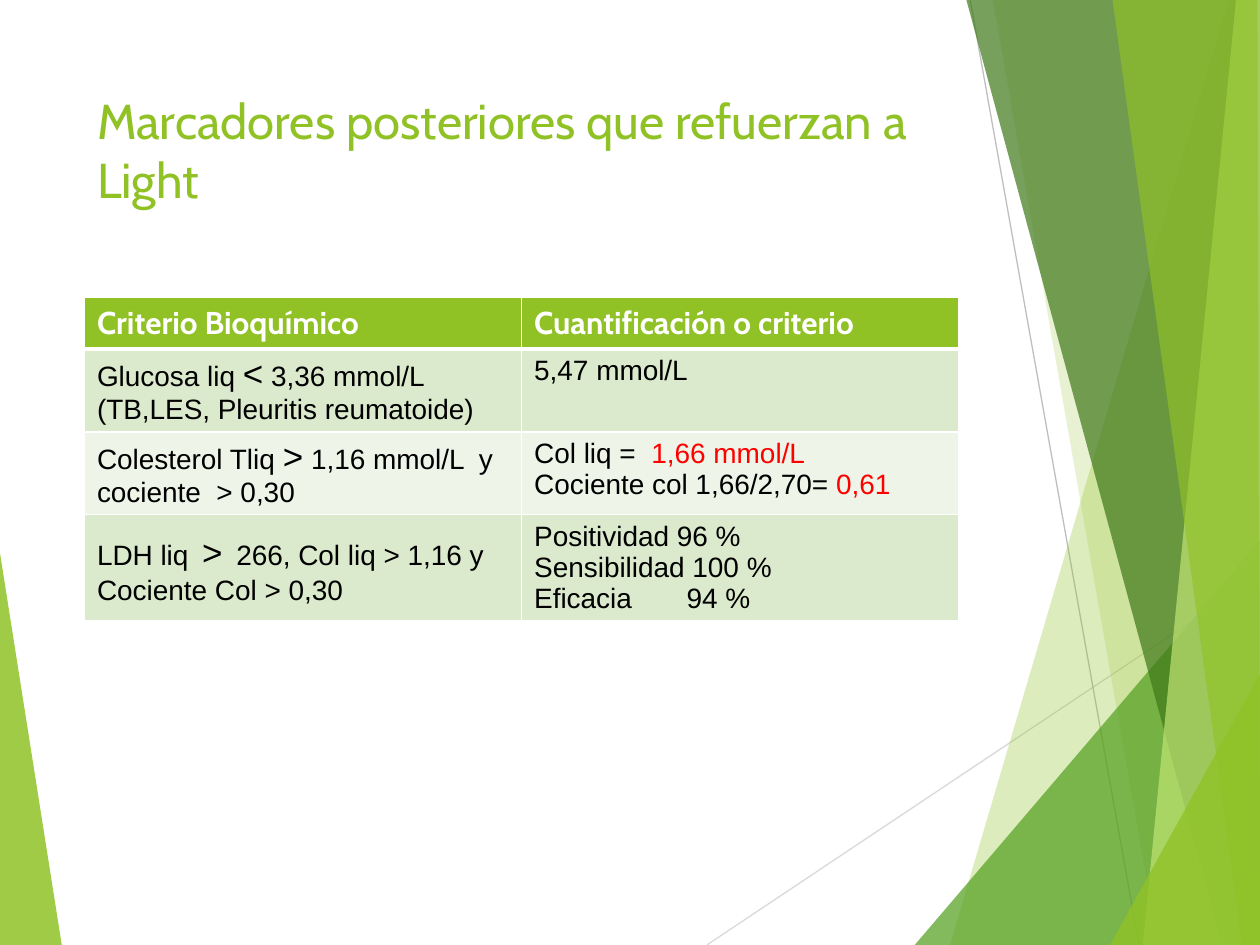
from typing import NamedTuple

from lxml.etree import SubElement
from pptx import Presentation
from pptx.dml.color import RGBColor
from pptx.enum.shapes import MSO_CONNECTOR
from pptx.enum.text import MSO_ANCHOR, MSO_AUTO_SIZE, PP_ALIGN
from pptx.oxml.ns import qn
from pptx.util import Inches, Pt

GREEN = "90C226"
WHITE = "FFFFFF"
BLACK = "000000"
RED = "FF0000"
BANDS = ("DBE9CD", "EEF4E8")


class Facet(NamedTuple):
    points: list
    color: str
    opacity: int


class Ray(NamedTuple):
    start: tuple
    end: tuple
    color: str


class Piece(NamedTuple):
    text: str
    size: int = 16
    color: str = BLACK


LEFT_FACET = Facet([(0, 4.39), (0.49, 7.5), (0, 7.5)], GREEN, 85)
RAYS = [
    Ray((5.61, 7.5), (10, 4.57), "D9D9D9"),
    Ray((7.7, 0), (9.04, 7.5), "BFBFBF"),
]
RIGHT_FACETS = [
    Facet([(9.75, 0), (7.54, 7.5), (10, 7.5), (10, 0)], GREEN, 30),
    Facet([(7.88, 0), (9.19, 7.5), (10, 7.5), (10, 0)], GREEN, 20),
    Facet([(7.26, 7.5), (10, 4.29), (10, 7.5)], "54A021", 72),
    Facet([(7.67, 0), (9.7, 7.5), (10, 7.5), (10, 0)], "3F7819", 70),
    Facet([(9.81, 0), (9.07, 7.5), (10, 7.5), (10, 0)], "C0E474", 70),
    Facet([(8.83, 0), (9.86, 7.5), (10, 7.5), (9.98, 0)], GREEN, 65),
    Facet([(8.81, 7.5), (10, 5.35), (10, 7.5)], GREEN, 80),
]

HEADERS = ["Criterio Bioquímico", "Cuantificación o criterio"]
# Each row holds two cells, each cell a list of paragraphs made of pieces
ROWS = [
    [
        [[Piece("Glucosa liq "), Piece("<", 20),
          Piece(" 3,36 mmol/L (TB,LES, Pleuritis reumatoide)")]],
        [[Piece("5,47 mmol/L")]],
    ],
    [
        [[Piece("Colesterol Tliq "), Piece(">", 20),
          Piece(" 1,16 mmol/L  y  cociente  > 0,30")]],
        [[Piece("Col liq =  "), Piece("1,66 mmol/L", color=RED)],
         [Piece("Cociente col 1,66/2,70= "), Piece("0,61", color=RED)]],
    ],
    [
        [[Piece("LDH liq"), Piece(" ", 28), Piece(">", 20), Piece(" ", 28),
          Piece("266, Col liq > 1,16 y Cociente Col > 0,30")]],
        [[Piece("Positividad 96 %")],
         [Piece("Sensibilidad 100 %")],
         [Piece("Eficacia\t94 %")]],
    ],
]


def rgb(color: str) -> RGBColor:
    return RGBColor.from_string(color)


def add_text(paragraph, text: str, *, size: int, color: str,
             font: str = "Arial", bold: bool = False) -> None:
    run = paragraph.add_run()
    run.text = text
    run.font.size = Pt(size)
    run.font.name = font
    run.font.bold = bold
    run.font.color.rgb = rgb(color)


def draw_facet(slide, facet: Facet) -> None:
    first, *rest = [(Inches(x), Inches(y)) for x, y in facet.points]
    builder = slide.shapes.build_freeform(*first)
    builder.add_line_segments(rest, close=True)
    shape = builder.convert_to_shape()
    shape.shadow.inherit = False
    shape.line.fill.background()
    shape.fill.solid()
    shape.fill.fore_color.rgb = rgb(facet.color)
    color_element = shape.fill._xPr.find(f".//{qn('a:srgbClr')}")
    SubElement(color_element, qn("a:alpha"), val=str(facet.opacity * 1000))


def draw_ray(slide, ray: Ray) -> None:
    ends = [Inches(value) for value in ray.start + ray.end]
    connector = slide.shapes.add_connector(MSO_CONNECTOR.STRAIGHT, *ends)
    connector.line.color.rgb = rgb(ray.color)
    connector.line.width = Pt(0.75)
    SubElement(connector._element.spPr, qn("a:effectLst"))


def format_cell(cell, fill: str, top: int = 1, bottom: int = 1) -> None:
    properties = cell._tc.get_or_add_tcPr()
    for side, width in (("L", 1), ("R", 1), ("T", top), ("B", bottom)):
        border = SubElement(properties, qn(f"a:ln{side}"), w=str(Pt(width)))
        solid = SubElement(border, qn("a:solidFill"))
        SubElement(solid, qn("a:srgbClr"), val=WHITE)
    cell.fill.solid()
    cell.fill.fore_color.rgb = rgb(fill)


def add_tab_stop(paragraph, position: float) -> None:
    tabs = SubElement(paragraph._p.get_or_add_pPr(), qn("a:tabLst"))
    SubElement(tabs, qn("a:tab"), pos=str(Inches(position)), algn="l")


def fill_cell(cell, paragraphs: list) -> None:
    frame = cell.text_frame
    for index, pieces in enumerate(paragraphs):
        paragraph = frame.add_paragraph() if index else frame.paragraphs[0]
        for piece in pieces:
            add_text(paragraph, piece.text, size=piece.size, color=piece.color)
        if any("\t" in piece.text for piece in pieces):
            add_tab_stop(paragraph, 1.21)


def draw_table(slide) -> None:
    row_count = len(ROWS) + 1
    frame = slide.shapes.add_table(row_count, len(HEADERS), Inches(0.67),
                                   Inches(2.36), Inches(6.94),
                                   Inches(0.41 * row_count))
    table = frame.table
    for column, header in enumerate(HEADERS):
        cell = table.cell(0, column)
        format_cell(cell, GREEN, bottom=3)
        add_text(cell.text_frame.paragraphs[0], header, size=18, color=WHITE,
                 font="Cabin", bold=True)
    for row, contents in enumerate(ROWS, start=1):
        for column, paragraphs in enumerate(contents):
            cell = table.cell(row, column)
            format_cell(cell, BANDS[(row - 1) % 2], top=3 if row == 1 else 1)
            fill_cell(cell, paragraphs)


def draw_title(slide) -> None:
    title = slide.shapes.title
    title.left, title.top = Inches(0.67), Inches(0.67)
    title.width, title.height = Inches(6.94), Inches(1.44)
    frame = title.text_frame
    frame.word_wrap = True
    frame.auto_size = MSO_AUTO_SIZE.NONE
    frame.vertical_anchor = MSO_ANCHOR.TOP
    paragraph = frame.paragraphs[0]
    paragraph.alignment = PP_ALIGN.LEFT
    add_text(paragraph, "Marcadores posteriores que refuerzan a Light",
             size=28, color=GREEN, font="Cabin")


def main() -> None:
    presentation = Presentation()
    presentation.slide_width = Inches(10)
    presentation.slide_height = Inches(7.5)
    slide = presentation.slides.add_slide(presentation.slide_layouts[5])

    # Background facets and rays
    draw_facet(slide, LEFT_FACET)
    for ray in RAYS:
        draw_ray(slide, ray)
    for facet in RIGHT_FACETS:
        draw_facet(slide, facet)

    # Title and table of criteria
    draw_title(slide)
    draw_table(slide)
    presentation.save("out.pptx")


if __name__ == "__main__":
    main()
